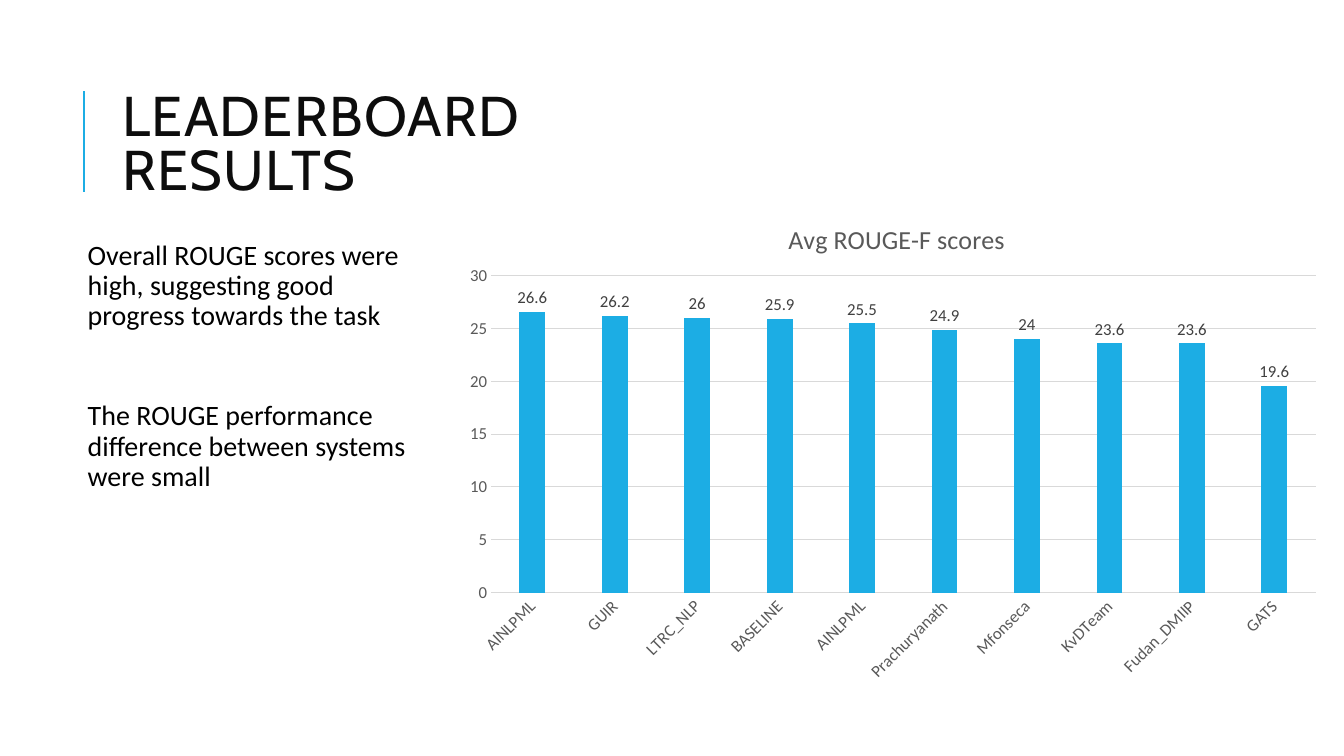
from lxml.etree import SubElement
from pptx import Presentation
from pptx.chart.data import CategoryChartData
from pptx.dml.color import RGBColor
from pptx.enum.chart import XL_CHART_TYPE as ChartType, XL_LABEL_POSITION as LabelPosition, XL_TICK_MARK as TickMark
from pptx.enum.shapes import MSO_CONNECTOR as Connector
from pptx.enum.text import MSO_ANCHOR as Anchor
from pptx.oxml.ns import qn
from pptx.util import Cm, Pt

TITLE = "LEADERBOARD RESULTS"
FINDINGS = [
    "Overall ROUGE scores were high, suggesting good progress towards the task",
    "The ROUGE performance difference between systems were small",
]
CHART_TITLE = "Avg ROUGE-F scores"
SCORES = [
    ("AINLPML", 26.6), ("GUIR", 26.2), ("LTRC_NLP", 26), ("BASELINE", 25.9),
    ("AINLPML", 25.5), ("Prachuryanath", 24.9), ("Mfonseca", 24),
    ("KvDTeam", 23.6), ("Fudan_DMIIP", 23.6), ("GATS", 19.6),
]
THEME = {
    "accent": RGBColor(0x1C, 0xAD, 0xE4),
    "grid": RGBColor(0xD9, 0xD9, 0xD9),
    "title": {"name": "Cabin", "size": Pt(40), "color": RGBColor(0x0D, 0x0D, 0x0D)},
    "body": {"name": "Calibri", "size": Pt(20), "color": RGBColor(0, 0, 0)},
    "chart_title": {"name": "Calibri", "size": Pt(18.6), "color": RGBColor(0x59, 0x59, 0x59)},
    "axis": {"name": "Calibri", "size": Pt(12), "color": RGBColor(0x59, 0x59, 0x59)},
    "label": {"name": "Calibri", "size": Pt(12), "color": RGBColor(0x40, 0x40, 0x40)},
}
TITLE_BOX = (Cm(2.84), Cm(1.63), Cm(12.57), Cm(4.17))
BODY_BOX = (Cm(2.08), Cm(5.94), Cm(8.71), Cm(10.92))
CHART_BOX = (Cm(11.4), Cm(4.83), Cm(22.2), Cm(12.6))
RULE_ENDS = (Cm(2.12), Cm(4.83), Cm(2.12), Cm(2.29))
BODY_INSET = Cm(0.13)
FINDING_GAP = Pt(48)
PLOT_LAYOUT = {"layoutTarget": "inner", "xMode": "edge", "yMode": "edge",
               "x": 0.044, "y": 0.168, "w": 0.936, "h": 0.634}
TITLE_LAYOUT = {"xMode": "edge", "yMode": "edge", "x": 0.376, "y": 0.05}


def set_attributes(target, values):
    for name, value in values.items():
        setattr(target, name, value)


def style_font(font, style):
    set_attributes(font, {"name": style["name"], "size": style["size"], "bold": False})
    font.color.rgb = style["color"]


def style_line(line, color, width):
    line.color.rgb = color
    line.width = width


def add_text(slide, box, paragraphs, style, frame_format, paragraph_format, gap=Pt(0)):
    frame = slide.shapes.add_textbox(*box).text_frame
    set_attributes(frame, {"word_wrap": True, **frame_format})
    for index, text in enumerate(paragraphs):
        paragraph = frame.add_paragraph() if index else frame.paragraphs[0]
        set_attributes(paragraph, {**paragraph_format, "space_before": gap if index else Pt(0)})
        run = paragraph.add_run()
        run.text = text
        style_font(run.font, style)
    return frame


def set_layout(parent, predecessor, values):
    for old_layout in parent.findall(qn("c:layout")):
        parent.remove(old_layout)
    layout = SubElement(parent, qn("c:layout"))
    manual = SubElement(layout, qn("c:manualLayout"))
    for name, value in values.items():
        SubElement(manual, qn(f"c:{name}")).set("val", str(value))
    if predecessor is None:
        parent.insert(0, layout)
    else:
        predecessor.addnext(layout)


def add_rule(slide):
    rule = slide.shapes.add_connector(Connector.STRAIGHT, *RULE_ENDS)
    style_line(rule.line, THEME["accent"], Pt(1.5))
    SubElement(rule._element.spPr, qn("a:effectLst"))


def add_score_chart(slide):
    names, values = zip(*SCORES)
    data = CategoryChartData()
    data.categories = names
    data.add_series("Series 1", values)
    chart = slide.shapes.add_chart(ChartType.COLUMN_CLUSTERED, *CHART_BOX, data).chart
    chart.has_legend = False
    style_font(chart.font, THEME["axis"])

    title_frame = chart.chart_title.text_frame
    title_frame.text = CHART_TITLE
    style_font(title_frame.paragraphs[0].runs[0].font, THEME["chart_title"])
    title = chart.chart_title._element
    set_layout(title, title.find(qn("c:tx")), TITLE_LAYOUT)
    set_layout(chart._chartSpace.chart.plotArea, None, PLOT_LAYOUT)

    for axis in (chart.category_axis, chart.value_axis):
        set_attributes(axis, {"major_tick_mark": TickMark.NONE, "minor_tick_mark": TickMark.NONE})
        style_font(axis.tick_labels.font, THEME["axis"])
    style_line(chart.category_axis.format.line, THEME["grid"], Pt(0.75))
    chart.category_axis._element.find(qn("c:txPr")).find(qn("a:bodyPr")).set("rot", "-2700000")
    set_attributes(chart.value_axis, {"minimum_scale": 0, "maximum_scale": 30, "major_unit": 5})
    chart.value_axis.format.line.fill.background()
    style_line(chart.value_axis.major_gridlines.format.line, THEME["grid"], Pt(0.75))

    plot = chart.plots[0]
    set_attributes(plot, {"gap_width": 219, "overlap": -27,
                          "vary_by_categories": False, "has_data_labels": True})
    set_attributes(plot.data_labels, {"show_value": True, "position": LabelPosition.OUTSIDE_END})
    style_font(plot.data_labels.font, THEME["label"])
    fill = plot.series[0].format.fill
    fill.solid()
    fill.fore_color.rgb = THEME["accent"]


def main():
    presentation = Presentation()
    set_attributes(presentation, {"slide_width": Cm(33.87), "slide_height": Cm(19.05)})
    slide = presentation.slides.add_slide(presentation.slide_layouts[6])
    add_rule(slide)
    title_frame = add_text(slide, TITLE_BOX, [TITLE], THEME["title"],
                           {"vertical_anchor": Anchor.MIDDLE}, {"line_spacing": 0.8})
    title_frame.paragraphs[0].runs[0].font._element.set("spc", "100")
    insets = {f"margin_{side}": BODY_INSET for side in ("left", "top", "right", "bottom")}
    add_text(slide, BODY_BOX, FINDINGS, THEME["body"], insets,
             {"line_spacing": 0.9, "space_after": Pt(2)}, FINDING_GAP)
    add_score_chart(slide)
    presentation.save("out.pptx")


if __name__ == "__main__":
    main()
